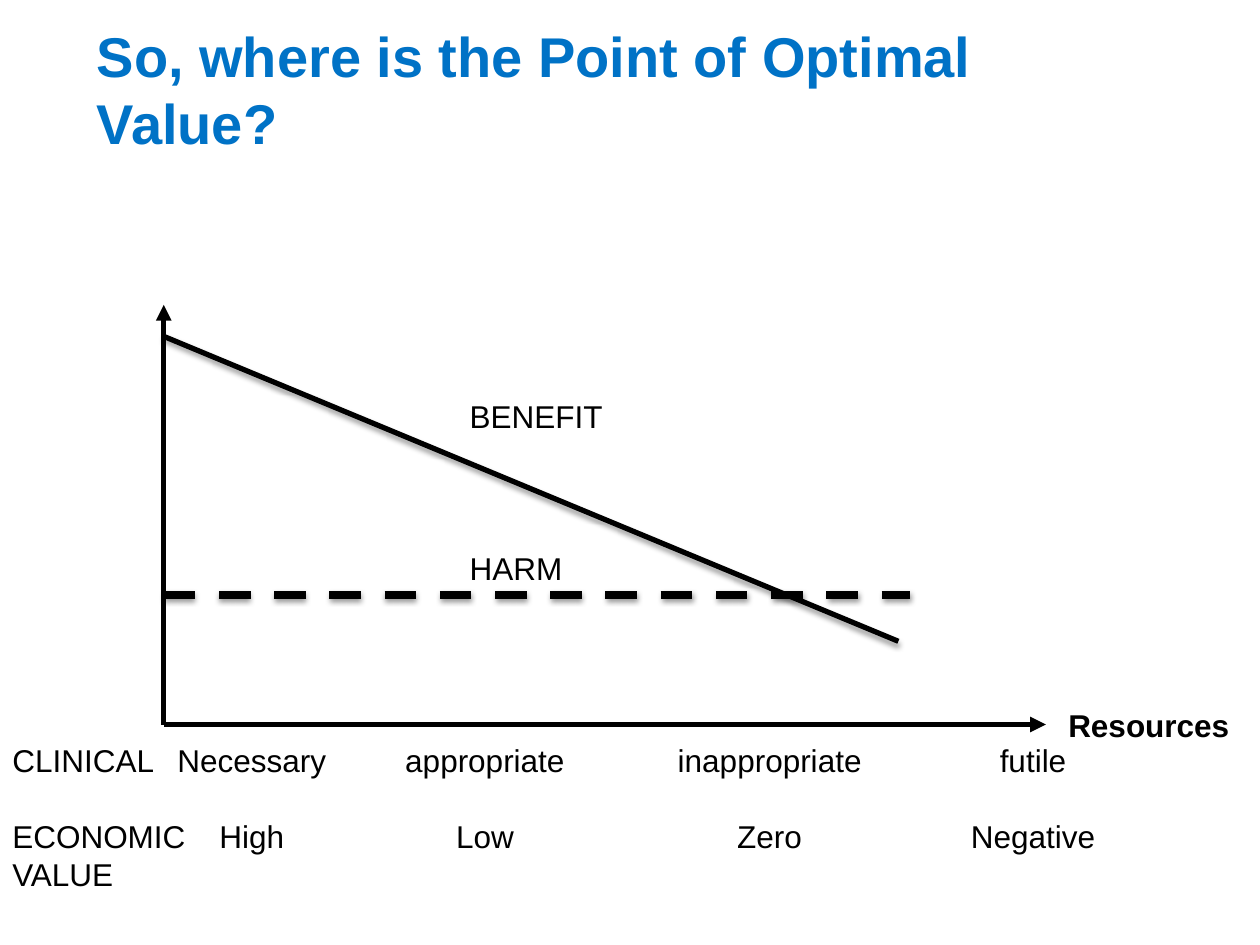
from pptx import Presentation
from pptx.dml.color import RGBColor
from pptx.enum import dml, shapes, text
from pptx.oxml import parse_xml
from pptx.oxml.ns import nsdecls
from pptx.util import Inches, Pt

BLUE = RGBColor(0x00, 0x72, 0xC6)
BLACK = RGBColor(0, 0, 0)

TITLE = "So, where is the Point of Optimal Value?"
CLINICAL = ["Necessary", "appropriate", "inappropriate", "futile"]
ECONOMIC = ["High", "Low", "Zero", "Negative"]
COLUMN_CENTERS = [0.6, 2.45, 4.71, 6.8]
ORIGIN = (1.3, 5.75)
AXIS_ENDS = [(1.3, 2.42), (8.3, 5.75)]
CURVES = [
    ((1.3, 2.67), (7.13, 5.09), 3, None),
    ((1.3, 4.72), (7.22, 4.72), 4.5, dml.MSO_LINE.DASH),
]
LINE_PITCH = 21.7
ROW_GAP = LINE_PITCH
CURVE_GAP = 3 * LINE_PITCH

TEXTS = [
    ((1.3, 5.83, 8.08, 1.01),
     [("\t" + "\t".join(CLINICAL), 0), ("\t" + "\t".join(ECONOMIC), ROW_GAP)],
     COLUMN_CENTERS, False),
    ((3.63, 3.1, 2.2, 1.62), [("BENEFIT", 0), ("HARM", CURVE_GAP)], [], False),
    ((8.38, 5.55, 1.62, 0.4), [("Resources", 0)], [], True),
    ((0, 5.83, 1.73, 1.31),
     [("CLINICAL", 0), ("ECONOMIC", ROW_GAP), ("VALUE", 0)], [], False),
]


def add_text(s, box, lines, tabs=(), bold=False, size=18, color=BLACK, pitch=LINE_PITCH):
    tf = s.shapes.add_textbox(*map(Inches, box)).text_frame
    tf.word_wrap = True
    for i, (line, gap) in enumerate(lines):
        p = tf.paragraphs[0] if i == 0 else tf.add_paragraph()
        p.text = line
        p.line_spacing = Pt(pitch)
        p.space_before = Pt(gap)
        if tabs:
            stops = "".join(f'<a:tab pos="{Inches(x)}" algn="ctr"/>' for x in tabs)
            p._p.get_or_add_pPr().append(
                parse_xml(f'<a:tabLst {nsdecls("a")}>{stops}</a:tabLst>'))
        for r in p.runs:
            r.font.name = "Arial"
            r.font.size = Pt(size)
            r.font.bold = bold
            r.font.color.rgb = color
    return tf


def add_line(s, start, end, width, dash=None, arrow=False, shadow=False):
    line = s.shapes.add_connector(
        shapes.MSO_CONNECTOR.STRAIGHT, *map(Inches, (*start, *end)))
    line.line.color.rgb = BLACK
    line.line.width = Pt(width)
    if dash:
        line.line.dash_style = dash
    if arrow:
        line.line._get_or_add_ln().append(
            parse_xml(f'<a:tailEnd {nsdecls("a")} type="triangle"/>'))
    effect = (f'<a:outerShdw blurRad="{Pt(3.1)}" dist="{Pt(1.6)}" dir="5400000" '
              'rotWithShape="0"><a:srgbClr val="000000"><a:alpha val="38000"/>'
              '</a:srgbClr></a:outerShdw>') if shadow else ""
    line._element.spPr.append(
        parse_xml(f'<a:effectLst {nsdecls("a")}>{effect}</a:effectLst>'))


def main():
    prs = Presentation()
    prs.slide_width, prs.slide_height = Inches(10), Inches(7.5)
    s = prs.slides.add_slide(prs.slide_layouts[6])
    title = add_text(s, (0.67, 0.29, 8.5, 0.83), [(TITLE, 0)],
                     bold=True, size=32, color=BLUE, pitch=38.3)
    title.vertical_anchor = text.MSO_ANCHOR.MIDDLE
    for end in AXIS_ENDS:
        add_line(s, ORIGIN, end, 3, arrow=True)
    for start, end, width, dash in CURVES:
        add_line(s, start, end, width, dash, shadow=True)
    for box, lines, tabs, bold in TEXTS:
        add_text(s, box, lines, tabs, bold)
    prs.save("out.pptx")


if __name__ == "__main__":
    main()
